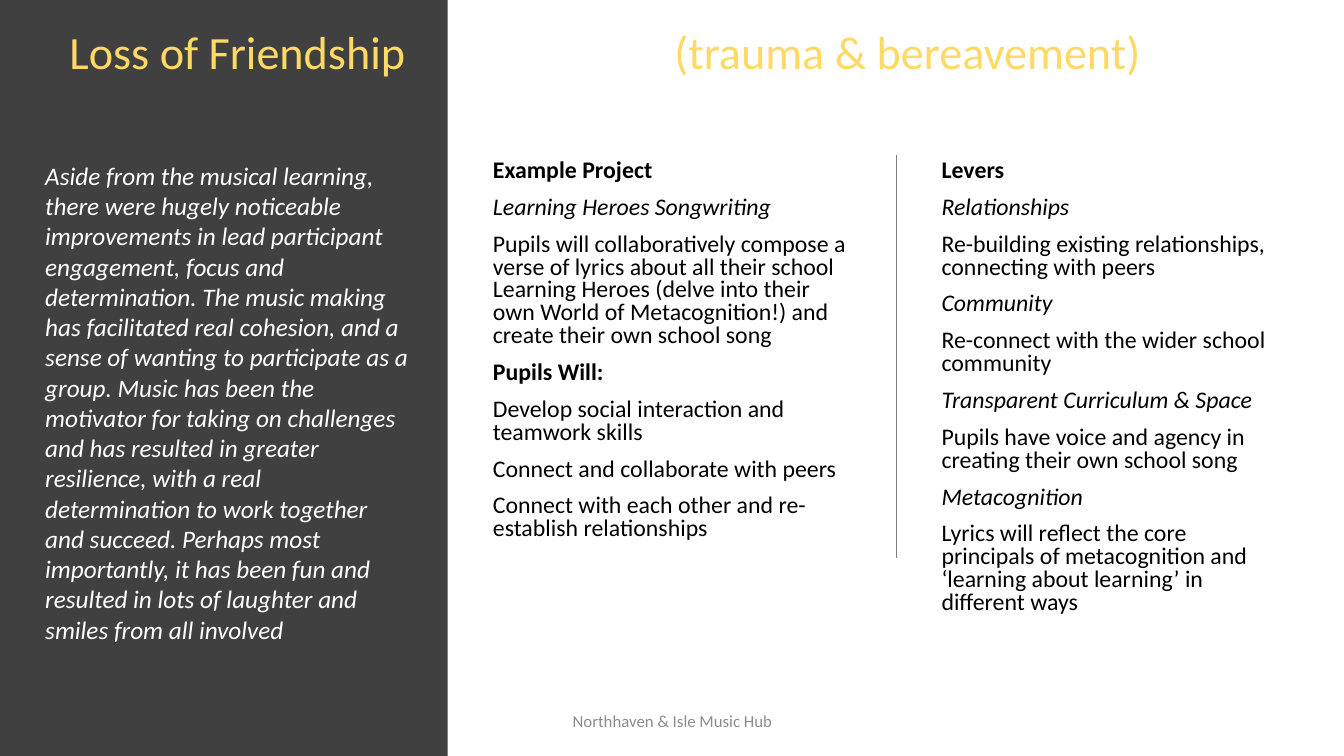
from lxml import etree
from pptx import Presentation
from pptx.dml.color import RGBColor
from pptx.enum.shapes import MSO_CONNECTOR, MSO_SHAPE
from pptx.enum.text import MSO_ANCHOR, PP_ALIGN
from pptx.oxml.ns import qn
from pptx.util import Pt

STRAIGHT = MSO_CONNECTOR.STRAIGHT
RECTANGLE = MSO_SHAPE.RECTANGLE
TOP, MIDDLE = MSO_ANCHOR.TOP, MSO_ANCHOR.MIDDLE
LEFT, CENTER = PP_ALIGN.LEFT, PP_ALIGN.CENTER

PX = 9144  # EMU per px, 100 px to the inch
SLIDE_WIDTH, SLIDE_HEIGHT = 1333, 750
PANEL_WIDTH = 444
CONTENT_TOP = 154
TITLE_TAB = 600
FONT = "Calibri"

DARK_GRAY = RGBColor(0x40, 0x40, 0x40)
YELLOW = RGBColor(0xFF, 0xD9, 0x66)
BLACK = RGBColor(0x00, 0x00, 0x00)
WHITE = RGBColor(0xFF, 0xFF, 0xFF)
LINE_GRAY = RGBColor(0x80, 0x80, 0x80)
FOOTER_GRAY = RGBColor(0x8C, 0x8C, 0x8C)

TITLE = "Loss of Friendship\t(trauma & bereavement)"
FOOTER = "Northhaven & Isle Music Hub"
QUOTE = (
    "Aside from the musical learning, there were hugely noticeable improvements in lead "
    "participant engagement, focus and determination. The music making has facilitated real "
    "cohesion, and a sense of wanting to participate as a group. Music has been the motivator "
    "for taking on challenges and has resulted in greater resilience, with a real determination "
    "to work together and succeed. Perhaps most importantly, it has been fun and resulted in "
    "lots of laughter and smiles from all involved"
)

# Each line is (style, text)
PROJECT = [
    ("bold", "Example Project"),
    ("italic", "Learning Heroes Songwriting"),
    ("plain", "Pupils will collaboratively compose a verse of lyrics about all their school "
              "Learning Heroes (delve into their own World of Metacognition!) and create "
              "their own school song"),
    ("bold", "Pupils Will:"),
    ("plain", "Develop social interaction and teamwork skills"),
    ("plain", "Connect and collaborate with peers"),
    ("plain", "Connect with each other and re-establish relationships"),
]
LEVERS = [
    ("bold", "Levers"),
    ("italic", "Relationships"),
    ("plain", "Re-building existing relationships, connecting with peers"),
    ("italic", "Community"),
    ("plain", "Re-connect with the wider school community"),
    ("italic", "Transparent Curriculum & Space"),
    ("plain", "Pupils have voice and agency in creating their own school song"),
    ("italic", "Metacognition"),
    ("plain", "Lyrics will reflect the core principals of metacognition and "
              "‘learning about learning’ in different ways"),
]
COLUMNS = [(479, 375, PROJECT), (924, 350, LEVERS)]  # left, width, lines


def add_text(slide, box, lines, size, color, line_spacing=1.0, space_before=0,
             align=LEFT, anchor=TOP):
    """Add a wrapped text box with one paragraph per (style, text) line."""
    text_box = slide.shapes.add_textbox(*(length * PX for length in box))
    frame = text_box.text_frame
    frame.word_wrap = True
    frame.vertical_anchor = anchor
    for index, (style, text) in enumerate(lines):
        paragraph = frame.add_paragraph() if index else frame.paragraphs[0]
        paragraph.text = text
        paragraph.alignment = align
        paragraph.line_spacing = line_spacing
        paragraph.space_before = Pt(space_before)
        font = paragraph.font
        font.name = FONT
        font.size = Pt(size)
        font.color.rgb = color
        font.bold = style == "bold"
        font.italic = style == "italic"
    return frame


def add_tab_stop(paragraph, position):
    properties = paragraph._p.get_or_add_pPr()
    tab_list = etree.Element(qn("a:tabLst"))
    etree.SubElement(tab_list, qn("a:tab"), pos=str(position * PX), algn="l")
    properties.find(qn("a:defRPr")).addprevious(tab_list)


def add_panel(slide):
    panel = slide.shapes.add_shape(RECTANGLE, 0, 0, PANEL_WIDTH * PX, SLIDE_HEIGHT * PX)
    panel.shadow.inherit = False
    panel.fill.solid()
    panel.fill.fore_color.rgb = DARK_GRAY
    panel.line.fill.background()


def add_divider(slide, x, top, bottom):
    divider = slide.shapes.add_connector(STRAIGHT, x * PX, top * PX, x * PX, bottom * PX)
    divider.line.color.rgb = LINE_GRAY
    divider.line.width = Pt(1)
    etree.SubElement(divider._element.spPr, qn("a:effectLst"))


def main():
    presentation = Presentation()
    presentation.slide_width = SLIDE_WIDTH * PX
    presentation.slide_height = SLIDE_HEIGHT * PX
    slide = presentation.slides.add_slide(presentation.slide_layouts[6])

    add_panel(slide)
    title = add_text(slide, (59, 24, 1239, 147), [("plain", TITLE)], 33, YELLOW,
                     line_spacing=0.9)
    add_tab_stop(title.paragraphs[0], TITLE_TAB)
    for left, width, lines in COLUMNS:
        add_text(slide, (left, CONTENT_TOP, width, 477), lines, 17, BLACK,
                 line_spacing=0.8, space_before=10)
    add_divider(slide, 889, CONTENT_TOP, 554)
    add_text(slide, (442, 695, 450, 40), [("plain", FOOTER)], 12, FOOTER_GRAY,
             align=CENTER, anchor=MIDDLE)
    add_text(slide, (35, CONTENT_TOP, 382, 495), [("italic", QUOTE)], 18, WHITE)

    presentation.save("out.pptx")


if __name__ == "__main__":
    main()
